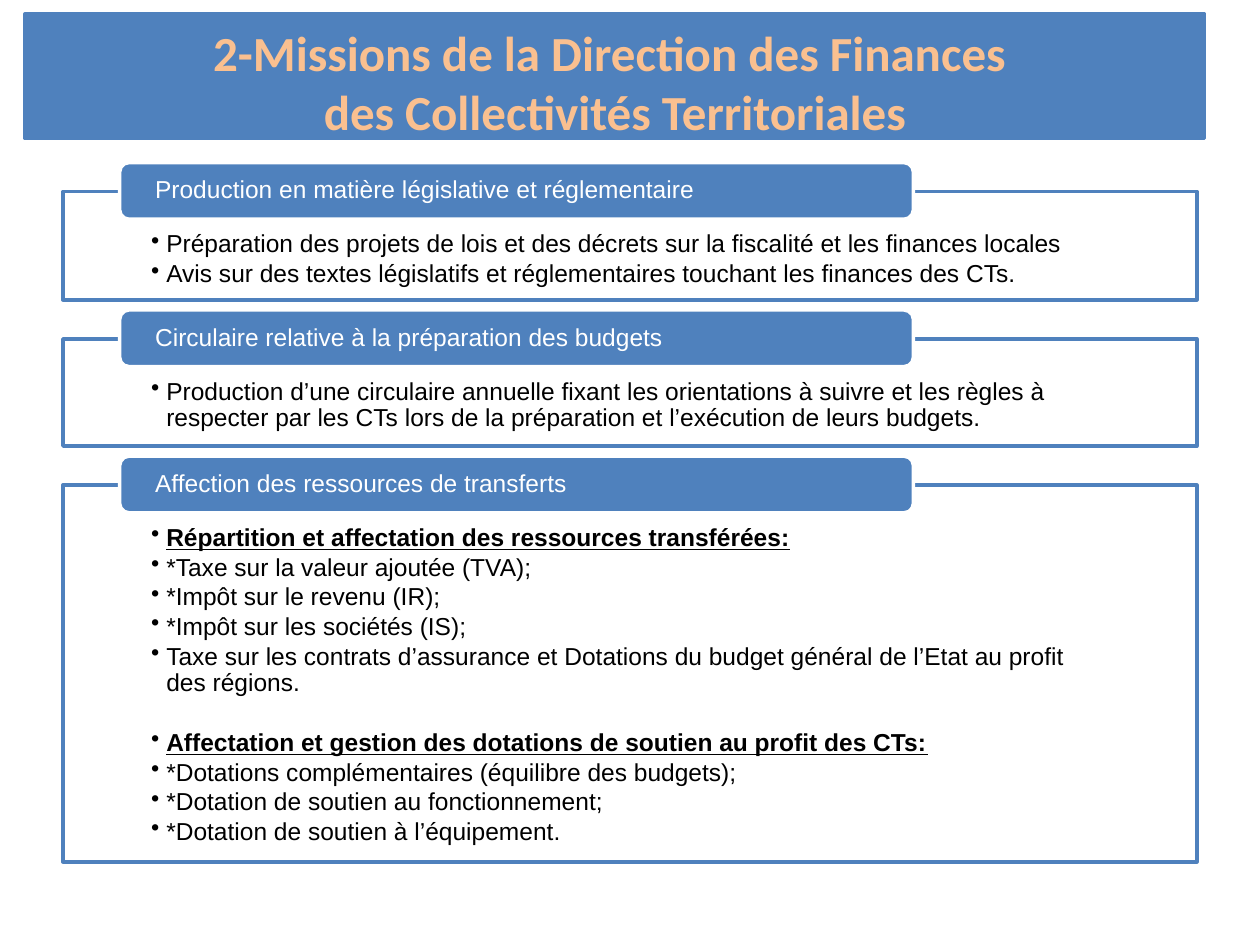
from lxml.etree import SubElement
from pptx import Presentation
from pptx.dml.color import RGBColor
from pptx.enum.shapes import MSO_SHAPE
from pptx.enum.text import MSO_ANCHOR, MSO_AUTO_SIZE, PP_ALIGN
from pptx.oxml.ns import qn
from pptx.util import Inches, Pt

COLORS = {"blue": "4F81BD", "white": "FFFFFF", "black": "000000", "peach": "FAC090"}

TITLE = "2-Missions de la Direction des Finances \vdes Collectivités Territoriales"

# Heading, box height in inches, bullet items
MISSIONS = [
    ("Production en matière législative et réglementaire", 0.86, [
        "Préparation des projets de lois et des décrets sur la fiscalité et les finances locales",
        "Avis sur des textes législatifs et réglementaires touchant les finances des CTs.",
    ]),
    ("Circulaire relative à la préparation des budgets", 0.85, [
        "Production d’une circulaire annuelle fixant les orientations à suivre et les règles à "
        "respecter par les CTs lors de la préparation et l’exécution de leurs budgets.",
    ]),
    ("Affection des ressources de transferts", 2.99, [
        "Répartition et affectation des ressources transférées:",
        "*Taxe sur la valeur ajoutée (TVA);",
        "*Impôt sur le revenu (IR);",
        "*Impôt sur les sociétés (IS);",
        "Taxe sur les contrats d’assurance et Dotations du budget général de l’Etat au profit "
        "des régions.",
        "Affectation et gestion des dotations de soutien au profit des CTs:",
        "*Dotations complémentaires (équilibre des budgets);",
        "*Dotation de soutien au fonctionnement;",
        "*Dotation de soutien à l’équipement.",
    ]),
]
FIRST_BOX_TOP = 1.52
BOX_GAP = 0.31
HEADING_RISE = 0.23


def color(name):
    return RGBColor.from_string(COLORS[name])


def paint(shape, fill, line):
    shape.fill.solid()
    shape.fill.fore_color.rgb = color(fill)
    shape.line.color.rgb = color(line)
    shape.line.width = Pt(2)


def add_panel(slide, kind, left, top, width, height, fill, line):
    panel = slide.shapes.add_shape(
        kind, Inches(left), Inches(top), Inches(width), Inches(height))
    panel.shadow.inherit = False
    paint(panel, fill, line)
    return panel


def set_insets(frame, left, top, right, bottom):
    frame.word_wrap = True
    frame.margin_left, frame.margin_top = Inches(left), Inches(top)
    frame.margin_right, frame.margin_bottom = Inches(right), Inches(bottom)


def format_paragraph(paragraph, size, font, font_color, align=PP_ALIGN.LEFT):
    paragraph.alignment = align
    paragraph.font.size = Pt(size)
    paragraph.font.name = font
    paragraph.font.color.rgb = color(font_color)


def add_bullet(paragraph):
    properties = paragraph._p.get_or_add_pPr()
    properties.set("marL", str(Inches(0.12)))
    properties.set("indent", str(-Inches(0.12)))
    bullet = SubElement(properties, qn("a:buChar"))
    bullet.set("char", "•")
    # Bullets come before the default run properties in the schema
    defaults = properties.find(qn("a:defRPr"))
    if defaults is not None:
        defaults.addprevious(bullet)


def add_items(slide, top, height, items):
    box = add_panel(slide, MSO_SHAPE.RECTANGLE, 0.5, top, 9, height, "white", "blue")
    frame = box.text_frame
    frame.vertical_anchor = MSO_ANCHOR.TOP
    set_insets(frame, 0.7, 0.32, 0.7, 0.11)
    for index, item in enumerate(items):
        paragraph = frame.paragraphs[0] if index == 0 else frame.add_paragraph()
        paragraph.text = item
        paragraph.line_spacing = 0.9
        paragraph.space_after = Pt(1.8)
        format_paragraph(paragraph, 14, "Arial", "black")
        if item.endswith(":"):
            paragraph.font.bold = True
            paragraph.font.underline = True
            if index:
                paragraph.space_before = Pt(17.2)
        add_bullet(paragraph)


def add_heading(slide, top, text):
    heading = add_panel(
        slide, MSO_SHAPE.ROUNDED_RECTANGLE, 0.95, top, 6.3, 0.45, "blue", "white")
    frame = heading.text_frame
    frame.vertical_anchor = MSO_ANCHOR.MIDDLE
    set_insets(frame, 0.26, 0, 0.26, 0)
    paragraph = frame.paragraphs[0]
    paragraph.text = text
    paragraph.line_spacing = 0.9
    format_paragraph(paragraph, 14, "Arial", "white")


def set_title(slide):
    title = slide.shapes.title
    title.left, title.top = Inches(0.2), Inches(0.11)
    title.width, title.height = Inches(9.36), Inches(0.99)
    paint(title, "blue", "blue")
    frame = title.text_frame
    frame.text = TITLE
    frame.auto_size = MSO_AUTO_SIZE.NONE
    frame.vertical_anchor = MSO_ANCHOR.MIDDLE
    set_insets(frame, 0.1, 0.1, 0.1, 0.02)
    paragraph = frame.paragraphs[0]
    format_paragraph(paragraph, 28, "Calibri", "peach", PP_ALIGN.CENTER)
    paragraph.font.bold = True


def main():
    presentation = Presentation()
    presentation.slide_width, presentation.slide_height = Inches(10), Inches(7.5)
    slide = presentation.slides.add_slide(presentation.slide_layouts[5])
    set_title(slide)

    # Stacked missions, each heading straddling the top edge of its box
    top = FIRST_BOX_TOP
    for heading, height, items in MISSIONS:
        add_items(slide, top, height, items)
        add_heading(slide, top - HEADING_RISE, heading)
        top += height + BOX_GAP

    presentation.save("out.pptx")


if __name__ == "__main__":
    main()
